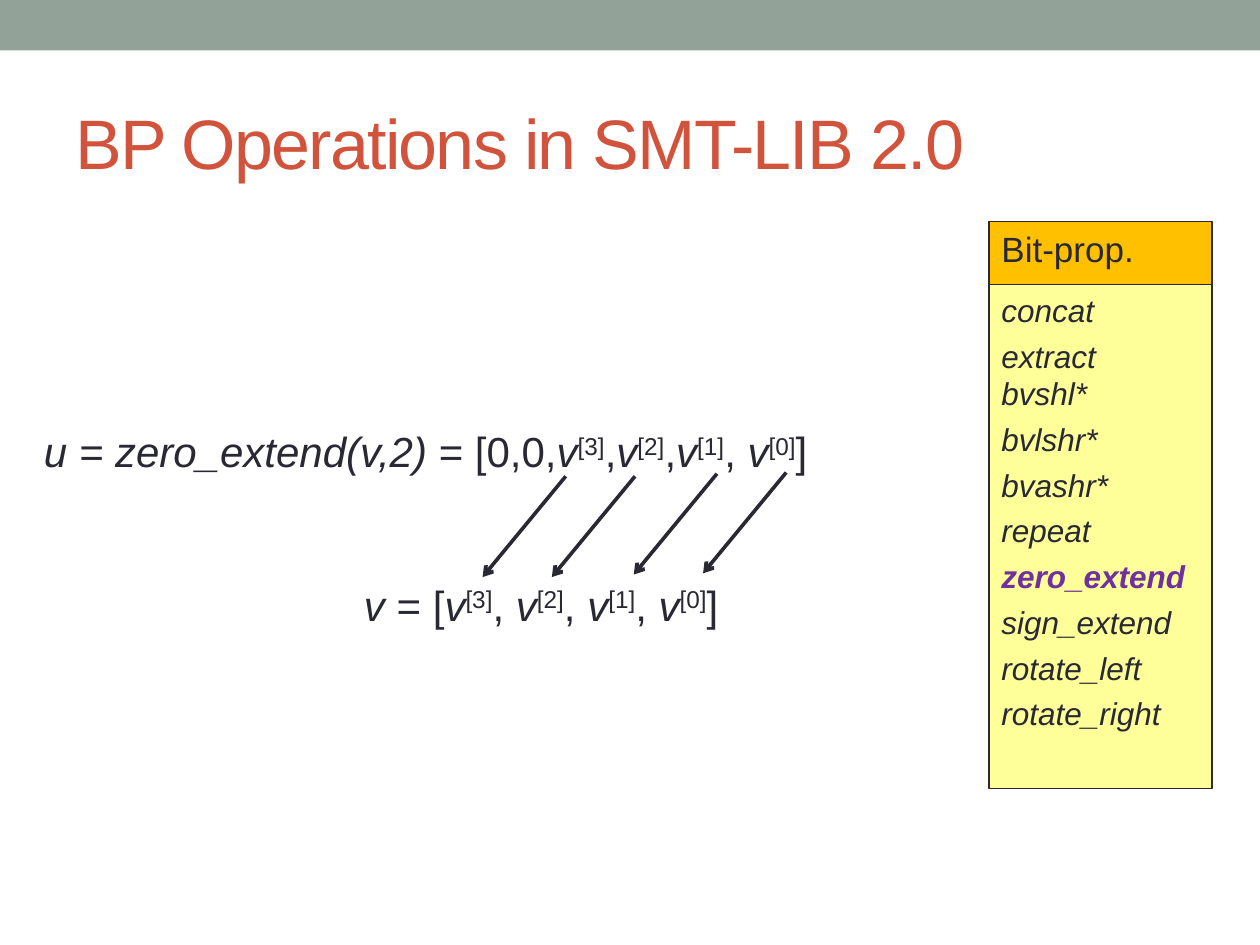
from dataclasses import dataclass

from lxml import etree
from pptx import Presentation
from pptx import util as u
from pptx.dml.color import RGBColor
from pptx.enum import shapes, text
from pptx.oxml import ns


@dataclass(frozen=True)
class Theme:
    font: str = "Arial"
    ink: str = "292934"
    title: str = "D2533C"
    band: str = "93A299"
    header: str = "FFC000"
    panel: str = "FFFF99"
    highlight: str = "7030A0"
    title_size: int = 40
    formula_size: int = 24
    header_size: int = 20
    list_size: int = 18
    border: float = 0.75
    arrow: float = 2.08


THEME = Theme()


def write(paragraph, words, size, color=THEME.ink, bold=False, italic=False,
          raised=False, spacing=0):
    for index, line in enumerate(words.split("\n")):
        if index:
            paragraph.add_line_break()
        run = paragraph.add_run()
        run.text = line
        run.font.name = THEME.font
        run.font.size = u.Pt(size)
        run.font.color.rgb = RGBColor.from_string(color)
        run.font.bold = bold
        run.font.italic = italic
        properties = run._r.get_or_add_rPr()
        if raised:
            properties.set("baseline", "30000")
        if spacing:
            properties.set("spc", str(spacing * 100))


def add_box(slide, left, top, width, height, fill, border=None):
    box = slide.shapes.add_shape(
        shapes.MSO_SHAPE.RECTANGLE, u.Inches(left), u.Inches(top),
        u.Inches(width), u.Inches(height))
    box.shadow.inherit = False
    box.fill.solid()
    box.fill.fore_color.rgb = RGBColor.from_string(fill)
    if border:
        box.line.color.rgb = RGBColor.from_string(border)
        box.line.width = u.Pt(THEME.border)
    else:
        box.line.fill.background()
    box.text_frame.word_wrap = True
    box.text_frame.vertical_anchor = text.MSO_ANCHOR.TOP
    return box.text_frame


def add_label(slide, left, top, width, height, anchor=text.MSO_ANCHOR.TOP):
    label = slide.shapes.add_textbox(
        u.Inches(left), u.Inches(top), u.Inches(width), u.Inches(height))
    label.text_frame.word_wrap = True
    label.text_frame.vertical_anchor = anchor
    return label.text_frame


def add_list(frame, entries, size, gap, highlighted=None, italic=False):
    for index, entry in enumerate(entries):
        paragraph = frame.add_paragraph() if index else frame.paragraphs[0]
        paragraph.alignment = text.PP_ALIGN.LEFT
        paragraph.space_before = u.Pt(gap)
        chosen = entry == highlighted
        write(paragraph, entry, size, italic=italic, bold=chosen,
              color=THEME.highlight if chosen else THEME.ink)


def add_formula(slide, left, top, width, name, opening, separators):
    paragraph = add_label(slide, left, top, width, 0.5).paragraphs[0]
    size = THEME.formula_size
    write(paragraph, name, size, italic=True)
    write(paragraph, opening, size)
    for bit, separator in zip((3, 2, 1, 0), separators):
        write(paragraph, "v", size, italic=True)
        write(paragraph, f"[{bit}]", size, raised=True)
        write(paragraph, separator, size)


def add_bit_arrow(slide, left, top, width=0.66, height=0.8):
    arrow = slide.shapes.add_connector(
        shapes.MSO_CONNECTOR.STRAIGHT, u.Inches(left), u.Inches(top + height),
        u.Inches(left + width), u.Inches(top))
    arrow.line.color.rgb = RGBColor.from_string(THEME.ink)
    arrow.line.width = u.Pt(THEME.arrow)
    etree.SubElement(arrow.line._get_or_add_ln(), ns.qn("a:headEnd"), type="arrow")
    etree.SubElement(arrow._element.spPr, ns.qn("a:effectLst"))


def main():
    deck = Presentation()
    deck.slide_width, deck.slide_height = u.Inches(10), u.Inches(7.5)
    slide = deck.slides.add_slide(deck.slide_layouts[6])

    add_box(slide, 0, 0, 10, 0.4, THEME.band)
    title = add_label(slide, 0.5, 0.58, 9, 1.08, text.MSO_ANCHOR.MIDDLE)
    write(title.paragraphs[0], "BP Operations in SMT-LIB 2.0",
          THEME.title_size, color=THEME.title, spacing=-1)

    header = add_box(slide, 7.85, 1.76, 1.77, 0.5, THEME.header, THEME.ink)
    add_list(header, ["Bit-prop."], THEME.header_size, 4)
    operations = add_box(slide, 7.85, 2.26, 1.77, 4, THEME.panel, THEME.ink)
    add_list(operations,
             ["concat", "extract\nbvshl*", "bvlshr*", "bvashr*", "repeat",
              "zero_extend", "sign_extend", "rotate_left", "rotate_right"],
             THEME.list_size, 4.5, highlighted="zero_extend", italic=True)

    add_formula(slide, 2.79, 4.55, 4.25, "v ", "= [", (", ", ", ", ", ", "]"))
    add_formula(slide, 0.25, 3.33, 7.42, "u = zero_extend(v,2) ", "= [0,0,",
                (",", ",", ", ", "]"))
    for left, top in ((5.58, 3.75), (5.03, 3.76), (4.38, 3.78), (3.83, 3.78)):
        add_bit_arrow(slide, left, top)

    deck.save("out.pptx")


if __name__ == "__main__":
    main()
